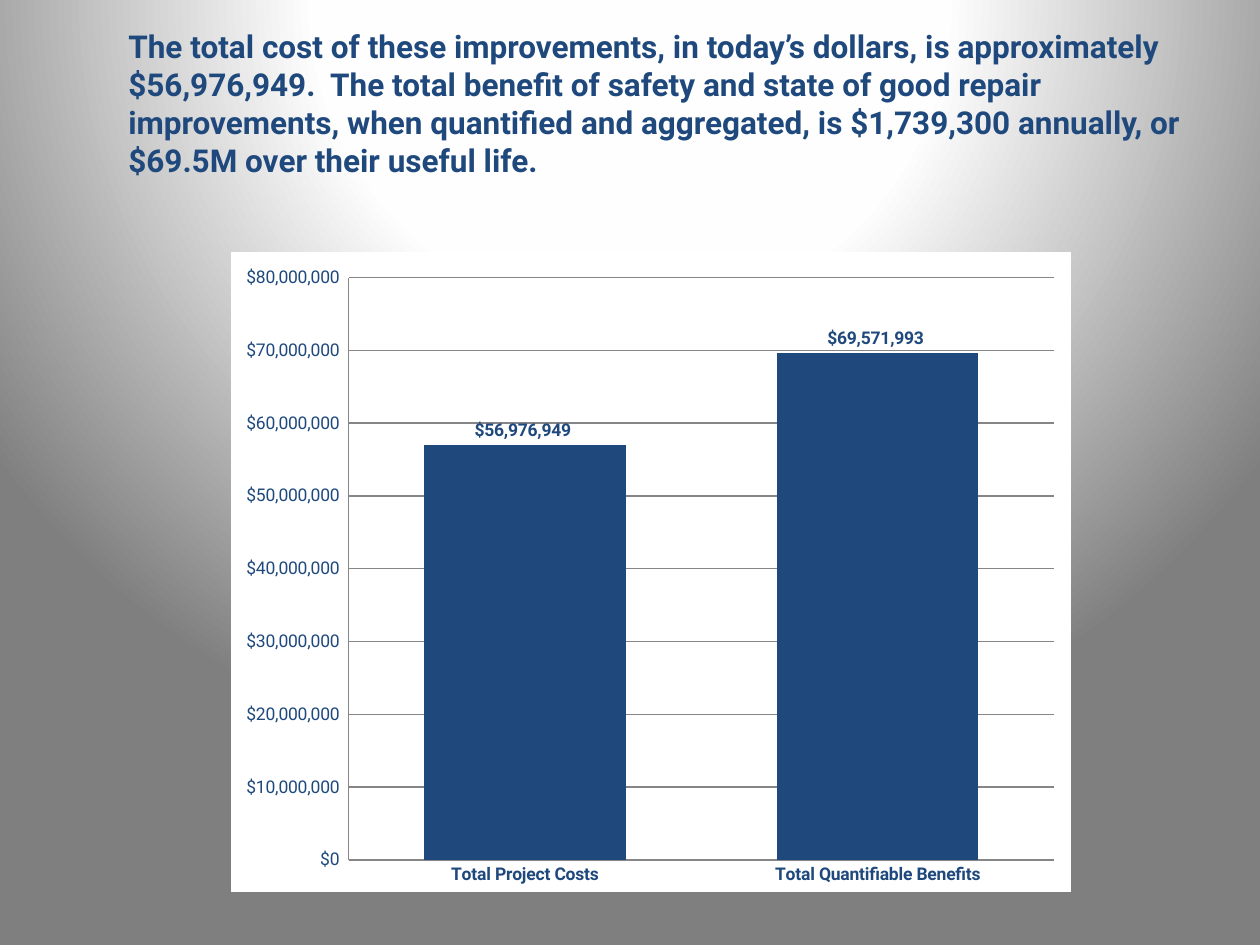
from lxml import etree
from pptx import Presentation
from pptx import util as u
from pptx.chart import data as cd
from pptx.dml.color import RGBColor
from pptx.enum import chart as ch
from pptx.oxml import parse_xml
from pptx.oxml.ns import nsdecls, qn

NAVY = RGBColor(0x1F, 0x49, 0x7D)
GREY = RGBColor(0x86, 0x86, 0x86)
WHITE = RGBColor(0xFF, 0xFF, 0xFF)
PALE = RGBColor(0xFE, 0xFE, 0xFE)
DARK = RGBColor(0x7F, 0x7F, 0x7F)
FONT = "Roboto"
MONEY = '"$"#,##0_);[Red]\\("$"#,##0\\)'
CLAIM = (
    "The total cost of these improvements, in today’s dollars, is approximately "
    "$56,976,949.  The total benefit of safety and state of good repair "
    "improvements, when quantified and aggregated, is $1,739,300 annually, or "
    "$69.5M over their useful life."
)
TOTALS = {"Total Project Costs": 56976949, "Total Quantifiable Benefits": 69571993}


def px(*vals):
    return [u.Emu(round(v * 914400 / 126)) for v in vals]


def style(font, size, bold=False):
    font.name = FONT
    font.size = u.Pt(size)
    font.bold = bold
    font.color.rgb = NAVY


def add_glow(slide):
    slide.background.fill.gradient()
    old = slide.element.find(".//" + qn("a:gradFill"))
    stops = "".join(
        f'<a:gs pos="{pos * 1000}"><a:srgbClr val="{color}"/></a:gs>'
        for pos, color in ((0, WHITE), (40, PALE), (100, DARK))
    )
    glow = parse_xml(
        f'<a:gradFill {nsdecls("a")} rotWithShape="1"><a:gsLst>{stops}</a:gsLst>'
        '<a:path path="circle"><a:fillToRect l="50000" t="-80000" r="50000" '
        'b="180000"/></a:path></a:gradFill>'
    )
    old.getparent().replace(old, glow)


def add_claim(slide):
    frame = slide.shapes.add_textbox(*px(116, 21, 1103, 165)).text_frame
    frame.word_wrap = True
    frame.text = CLAIM
    style(frame.paragraphs[0].runs[0].font, 18, True)


def set_axis(axis, bold):
    axis.major_tick_mark = axis.minor_tick_mark = ch.XL_TICK_MARK.NONE
    axis.format.line.color.rgb = GREY
    style(axis.tick_labels.font, 10, bold)


def set_frame(chart):
    space = chart.element
    space.find(qn("c:chart")).addnext(parse_xml(
        f'<c:spPr {nsdecls("c", "a")}><a:solidFill><a:srgbClr val="{WHITE}"/>'
        '</a:solidFill><a:ln><a:noFill/></a:ln></c:spPr>'
    ))
    area = space.find(".//" + qn("c:plotArea"))
    for old in area.findall(qn("c:layout")):
        area.remove(old)
    layout = etree.Element(qn("c:layout"))
    manual = etree.SubElement(layout, qn("c:manualLayout"))
    parts = dict(layoutTarget="inner", xMode="edge", yMode="edge",
                 x="0.14", y="0.04", w="0.84", h="0.91")
    for tag, val in parts.items():
        etree.SubElement(manual, qn("c:" + tag)).set("val", val)
    area.insert(0, layout)


def add_bars(slide):
    data = cd.CategoryChartData()
    data.categories = list(TOTALS)
    data.add_series("Series 1", list(TOTALS.values()))
    chart = slide.shapes.add_chart(
        ch.XL_CHART_TYPE.COLUMN_CLUSTERED, *px(231, 252, 840, 640), data
    ).chart
    chart.has_legend = chart.has_title = False
    style(chart.font, 10)
    set_frame(chart)

    set_axis(chart.category_axis, True)
    axis = chart.value_axis
    set_axis(axis, False)
    axis.minimum_scale, axis.maximum_scale = 0, 80_000_000
    axis.major_unit = 10_000_000
    axis.major_gridlines.format.line.color.rgb = GREY
    axis.tick_labels.number_format = MONEY
    axis.tick_labels.number_format_is_linked = False

    plot = chart.plots[0]
    plot.gap_width, plot.overlap = 75, 40
    plot.vary_by_categories = False
    bars = plot.series[0]
    bars.format.fill.solid()
    bars.format.fill.fore_color.rgb = NAVY
    labels = bars.data_labels
    labels.show_value = True
    labels.position = ch.XL_LABEL_POSITION.OUTSIDE_END
    labels.number_format = MONEY
    labels.number_format_is_linked = False
    style(labels.font, 10, True)


def main():
    """Build the slide that sets project costs against benefits."""
    deck = Presentation()
    deck.slide_width, deck.slide_height = px(1260, 945)
    slide = deck.slides.add_slide(deck.slide_layouts[6])
    add_glow(slide)
    add_claim(slide)
    add_bars(slide)
    deck.save("out.pptx")


if __name__ == "__main__":
    main()
